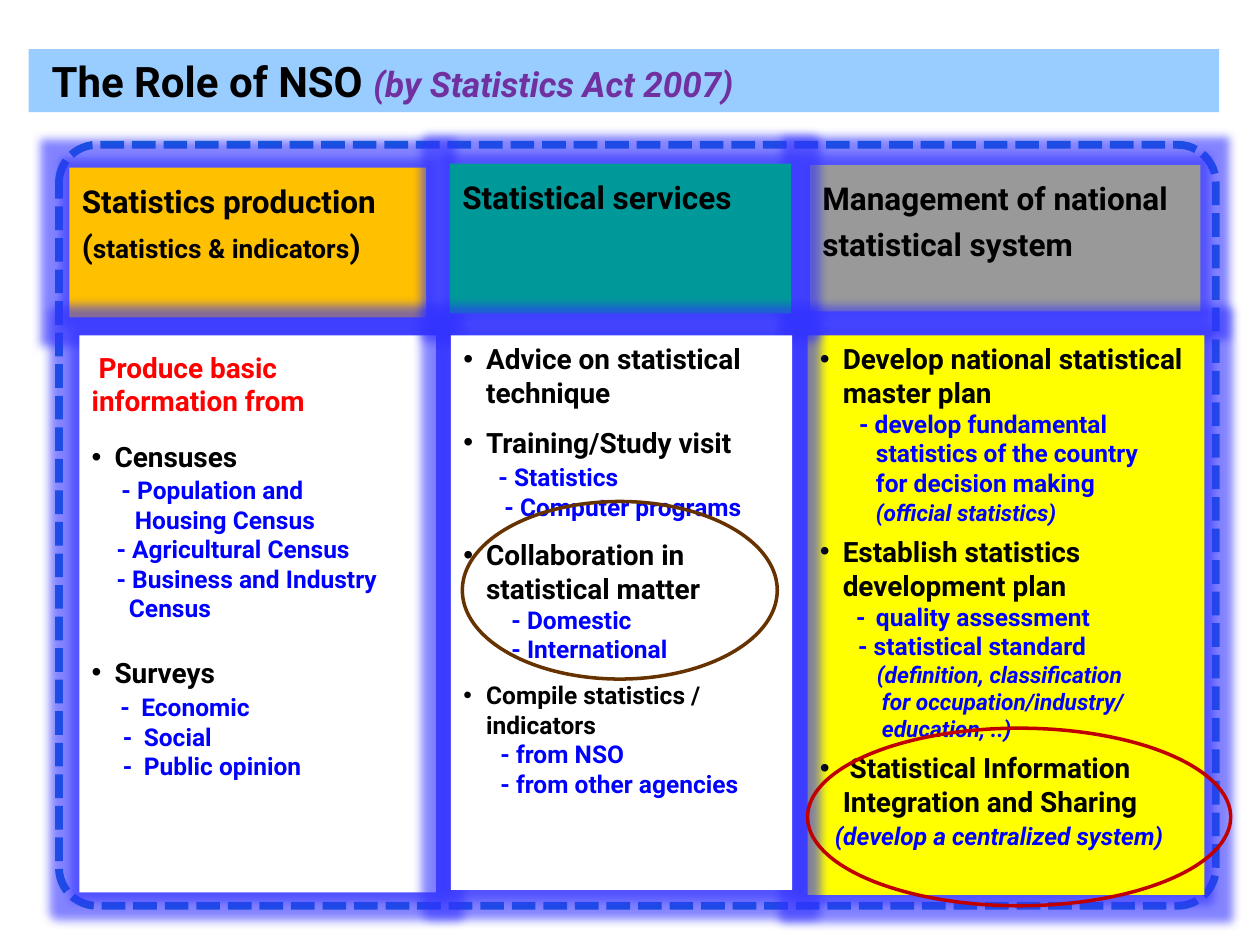
from lxml.etree import SubElement
from pptx import Presentation
from pptx.dml.color import RGBColor
from pptx.enum.dml import MSO_LINE
from pptx.enum.shapes import MSO_SHAPE
from pptx.enum.text import MSO_ANCHOR, PP_ALIGN
from pptx.oxml.ns import qn
from pptx.util import Cm, Pt

COLOURS = {
    "black": "000000", "white": "FFFFFF", "blue": "0000FF", "red": "FF0000",
    "glow": "3333FF", "frame": "0070C0", "orange": "FFC000", "grey": "999999",
    "yellow": "FFFF00", "teal": "009999", "banner": "99CCFF", "purple": "7030A0",
    "brown": "663300", "crimson": "C00000",
}
HANG = 0.46


def bullet(text, before=0, size=16):
    return {"runs": [(text, size, "black", False)], "left": HANG,
            "first": -HANG, "before": before, "bullet": True}


def detail(text, left, before=0, size=14, italic=False, hang=0):
    return {"runs": [(text, size, "blue", italic)], "left": left,
            "first": -hang, "before": before}


def heading(*runs):
    return {"runs": [(text, size, "black", False) for text, size in runs], "spacing": 26}


class SlideBuilder:
    font = "Roboto"

    def __init__(self, deck):
        self.page = deck.slides.add_slide(deck.slide_layouts[6])

    def colour(self, name):
        return RGBColor.from_string(COLOURS[name])

    def shape(self, kind, place, fill=None, line=None, width=2):
        shape = self.page.shapes.add_shape(kind, *[Cm(value) for value in place])
        shape.shadow.inherit = False
        if fill:
            shape.fill.solid()
            shape.fill.fore_color.rgb = self.colour(fill)
        else:
            shape.fill.background()
        if line:
            shape.line.color.rgb = self.colour(line)
            shape.line.width = Pt(width)
        else:
            shape.line.fill.background()
        return shape

    def frame(self, place):
        shape = self.shape(MSO_SHAPE.ROUNDED_RECTANGLE, place, line="frame", width=4.5)
        shape.adjustments[0] = 0.05
        shape.line.dash_style = MSO_LINE.SQUARE_DOT

    def ring(self, place, line):
        self.shape(MSO_SHAPE.OVAL, place, line=line)

    def panel(self, place, fill, lines, top=0.13, left=0.25, glow=True):
        box = self.shape(MSO_SHAPE.RECTANGLE, place, fill)
        if glow:
            self.glow(box)
        self.add_lines(box.text_frame, lines, top, left)

    def label(self, place, lines):
        box = self.page.shapes.add_textbox(*[Cm(value) for value in place])
        self.add_lines(box.text_frame, lines)

    def glow(self, shape):
        effects = shape._element.spPr.find(qn("a:effectLst"))
        glow = SubElement(effects, qn("a:glow"), rad=str(Pt(11)))
        colour = SubElement(glow, qn("a:srgbClr"), val=COLOURS["glow"])
        SubElement(colour, qn("a:alpha"), val="60000")

    def add_lines(self, frame, lines, top=0.13, left=0.25):
        frame.word_wrap = True
        frame.vertical_anchor = MSO_ANCHOR.TOP
        frame.margin_top, frame.margin_left = Cm(top), Cm(left)
        for index, line in enumerate(lines):
            para = frame.add_paragraph() if index else frame.paragraphs[0]
            para.alignment = PP_ALIGN.LEFT
            if line.get("before"):
                para.space_before = Pt(line["before"])
            if line.get("spacing"):
                para.line_spacing = Pt(line["spacing"])
            properties = para._p.get_or_add_pPr()
            properties.set("marL", str(Cm(line.get("left", 0))))
            properties.set("indent", str(Cm(line.get("first", 0))))
            if line.get("bullet"):
                SubElement(properties, qn("a:buFont"), typeface="Arial")
                SubElement(properties, qn("a:buChar"), char="•")
            for text, size, colour, italic in line["runs"]:
                span = para.add_run()
                span.text = text
                span.font.name = self.font
                span.font.size = Pt(size)
                span.font.bold = True
                span.font.italic = italic
                span.font.color.rgb = self.colour(colour)


def main():
    deck = Presentation()
    deck.slide_width, deck.slide_height = Cm(25.4), Cm(19.05)
    slide = SlideBuilder(deck)

    slide.frame((1.19, 2.92, 23.32, 15.34))
    slide.panel((1.4, 3.38, 7.19, 3.02), "orange", [
        heading(("Statistics production (", 18), ("statistics & indicators", 15), (")", 18)),
    ])
    slide.panel((1.6, 6.76, 7.19, 11.23), "white", [
        bullet("Censuses"),
        detail("- Population and", 0.6, before=1),
        detail("Housing Census", 0.87),
        detail("- Agricultural Census", 0.5),
        detail("- Business and Industry", 0.5),
        detail("Census", 0.75),
        bullet("Surveys", before=18.75),
        detail("-\tEconomic", 1.0, before=2, hang=0.42),
        detail("-\tSocial", 1.05, hang=0.42),
        detail("-\tPublic opinion", 1.05, hang=0.42),
    ], top=2.11)
    slide.panel((16.33, 3.33, 7.87, 2.95), "grey", [
        heading(("Management of national statistical system", 18)),
    ])
    slide.panel((16.28, 6.76, 8, 11.28), "yellow", [
        bullet("Develop national statistical master plan"),
        detail("- develop fundamental", 0.79),
        detail("statistics of the country", 1.13),
        detail("for decision making", 1.13),
        detail("(official statistics)", 1.13, before=1, size=13, italic=True),
        bullet("Establish statistics development plan", before=4.7),
        detail("-\tquality assessment", 1.13, hang=0.4),
        detail("- statistical standard", 0.77),
        detail("(definition, classification", 1.15, size=13, italic=True),
        detail("for occupation/industry/", 1.25, size=13, italic=True),
        detail("education, ..)", 1.25, size=13, italic=True),
        bullet(" Statistical Information Integration and Sharing", before=4.7),
        detail("(develop a centralized system)", 0.3, before=2, italic=True),
    ])
    slide.panel((9.07, 3.3, 6.88, 3.02), "teal", [heading(("Statistical services", 18))])
    slide.panel((9.09, 6.76, 6.88, 11.18), "white", [
        bullet("Advice on statistical technique"),
        bullet("Training/Study visit", before=9.4),
        detail("- Statistics", 0.71, before=2),
        detail("- Computer programs", 0.83),
        bullet("Collaboration in statistical matter", before=9.4),
        detail("- Domestic", 0.97),
        detail("- International", 0.97),
        bullet("Compile statistics / indicators", before=9.4, size=14),
        detail("- from NSO", 0.75),
        detail("- from other agencies", 0.75),
    ])
    slide.panel((0.58, 0.99, 24, 1.27), "banner", [
        {"runs": [("The Role of NSO ", 24, "black", False),
                  ("(by Statistics Act 2007)", 20, "purple", True)]},
    ], left=0.46, glow=False)
    slide.label((1.6, 6.93, 6.5, 1.63), [
        {"runs": [(" Produce basic information from", 16, "red", False)]},
    ])
    slide.ring((9.32, 10.11, 6.35, 3.58), "brown")
    slide.ring((16.28, 14.68, 8.53, 3.58), "crimson")
    deck.save("out.pptx")


if __name__ == "__main__":
    main()
